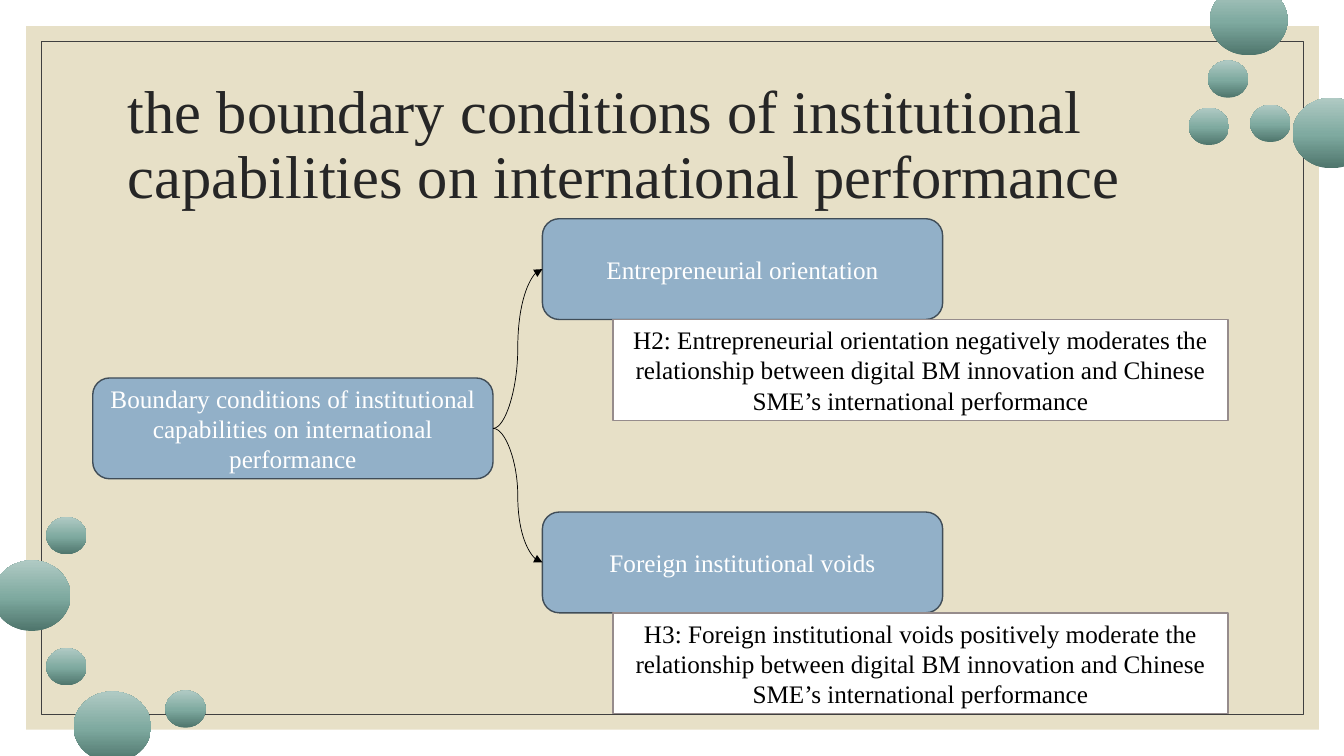
from copy import deepcopy

from lxml.etree import SubElement
from pptx import Presentation
from pptx.dml.color import RGBColor
from pptx.enum.shapes import MSO_CONNECTOR, MSO_SHAPE
from pptx.enum.text import MSO_ANCHOR, PP_ALIGN
from pptx.oxml.ns import qn
from pptx.util import Pt

PX = 9144  # EMU per px, 100 px to the inch
RIGHT, LEFT = 3, 1  # connection sites of a rectangle

TITLE = {"size": Pt(43.2), "name": "Times New Roman"}
BODY = {"size": Pt(18), "name": "Times New Roman"}
BUBBLE_STOPS = [(0, "4E756C"), (0.48, "7FAAA0"), (1, "B0CAC4")]
BIG, SMALL = (77, 70), (40, 37)
BUBBLES = [
    (BIG, [(1200, -15), (1282, 97), (-7, 556), (73, 686)]),
    (SMALL, [(46, 643), (46, 513), (1179, 107), (164, 685), (1198, 60), (1240, 104)]),
]
BRANCHES = [
    (217, "Entrepreneurial orientation",
     "H2: Entrepreneurial orientation negatively moderates the relationship "
     "between digital BM innovation and Chinese SME’s international performance"),
    (508, "Foreign institutional voids",
     "H3: Foreign institutional voids positively moderate the relationship "
     "between digital BM innovation and Chinese SME’s international performance"),
]


def px(*lengths):
    return [length * PX for length in lengths]


def color(value):
    return RGBColor.from_string(value)


def set_values(target, values):
    for name, value in values.items():
        setattr(target, name, value)


def write(shape, text, font, text_color, **para_format):
    frame = shape.text_frame
    set_values(frame, {"word_wrap": True, "vertical_anchor": MSO_ANCHOR.MIDDLE})
    para = frame.paragraphs[0]
    set_values(para, para_format)
    span = para.add_run()
    span.text = text
    set_values(span.font, font)
    span.font.color.rgb = color(text_color)


def add_box(page, kind, place, fill=None, line=None, width=1):
    box = page.shapes.add_shape(kind, *px(*place))
    box.shadow.inherit = False
    if fill:
        box.fill.solid()
        box.fill.fore_color.rgb = color(fill)
    else:
        box.fill.background()
    if line:
        box.line.color.rgb = color(line)
        box.line.width = Pt(width)
    else:
        box.line.fill.background()
    return box


def add_topic(page, left, top, text):
    box = add_box(page, MSO_SHAPE.ROUNDED_RECTANGLE, (left, top, 397, 100), "92B0C8", "404D58")
    write(box, text, BODY, "FFFFFF", alignment=PP_ALIGN.CENTER)
    return box


def add_hypothesis(page, top, text):
    box = add_box(page, MSO_SHAPE.RECTANGLE, (608, top, 610, 100), "FFFFFF", "968C8C")
    write(box, text, BODY, "000000", alignment=PP_ALIGN.CENTER)


def add_arrow(page, source, target):
    arrow = page.shapes.add_connector(MSO_CONNECTOR.CURVE, 0, 0, 0, 0)
    arrow.begin_connect(source, RIGHT)
    arrow.end_connect(target, LEFT)
    arrow.line.color.rgb = color("000000")
    arrow.line.width = Pt(0.5)
    SubElement(arrow.line._get_or_add_ln(), qn("a:tailEnd"), type="triangle")
    SubElement(arrow._element.spPr, qn("a:effectLst"))


def add_bubble(page, place):
    bubble = add_box(page, MSO_SHAPE.FLOWCHART_CONNECTOR, place)
    bubble.fill.gradient()
    bubble.fill.gradient_angle = 90
    stop_list = bubble._element.spPr.find(qn("a:gradFill")).find(qn("a:gsLst"))
    stop_list.append(deepcopy(stop_list[0]))
    for stop, (position, value) in zip(bubble.fill.gradient_stops, BUBBLE_STOPS):
        stop.position = position
        stop.color.rgb = color(value)


def main():
    deck = Presentation()
    deck.slide_width, deck.slide_height = px(1333, 750)
    page = deck.slides.add_slide(deck.slide_layouts[6])

    # Background panel and frame
    add_box(page, MSO_SHAPE.RECTANGLE, (26, 26, 1282, 698), "E7E0C7")
    add_box(page, MSO_SHAPE.RECTANGLE, (41, 41, 1252, 668), None, "404040", 0.5)

    # Title
    title = page.shapes.add_textbox(*px(117, 70, 1100, 150))
    write(title, "the boundary conditions of institutional capabilities on "
          "international performance", TITLE, "262626", line_spacing=0.9)

    # Root topic with its two branches
    root = add_topic(page, 92, 375, "Boundary conditions of institutional "
                     "capabilities on international performance")
    for top, topic, hypothesis in BRANCHES:
        branch = add_topic(page, 538, top, topic)
        add_arrow(page, root, branch)
        add_hypothesis(page, top + 100, hypothesis)

    # Corner bubbles
    for size, corners in BUBBLES:
        for corner in corners:
            add_bubble(page, corner + size)

    deck.save("out.pptx")


if __name__ == "__main__":
    main()
